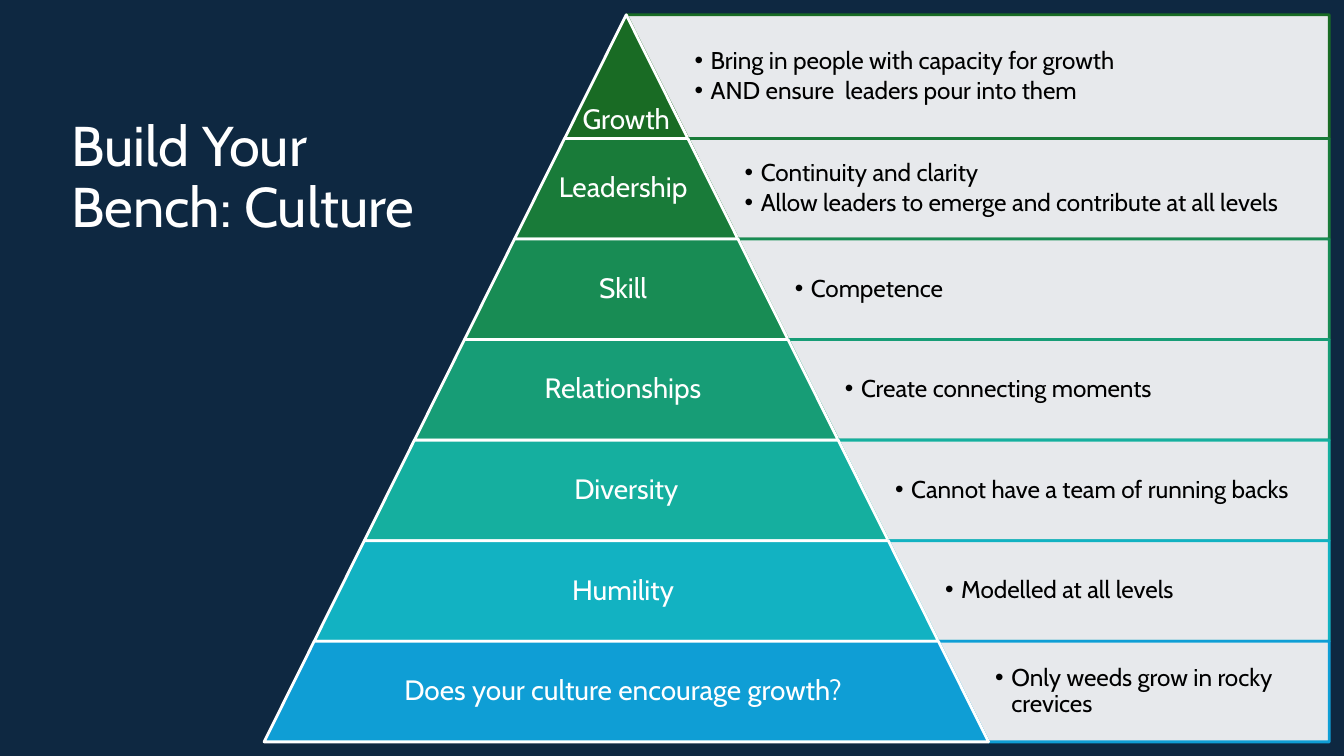
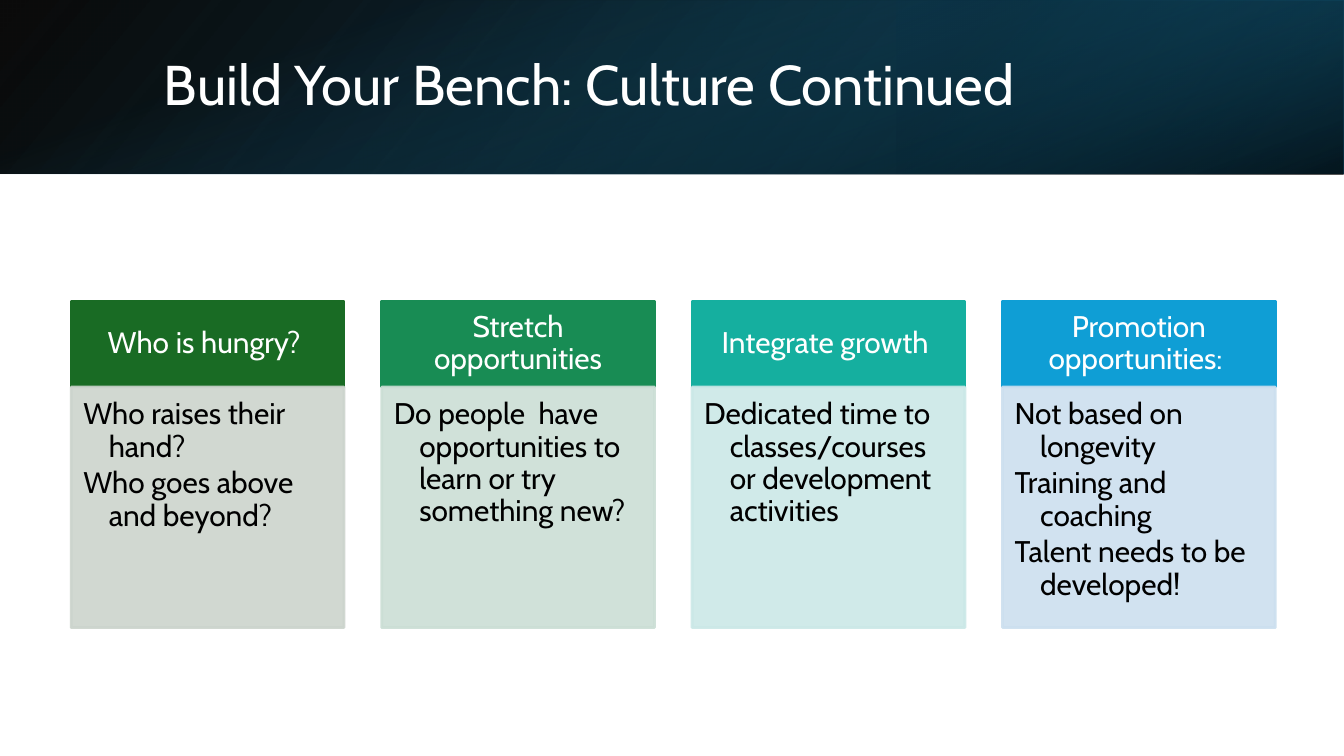
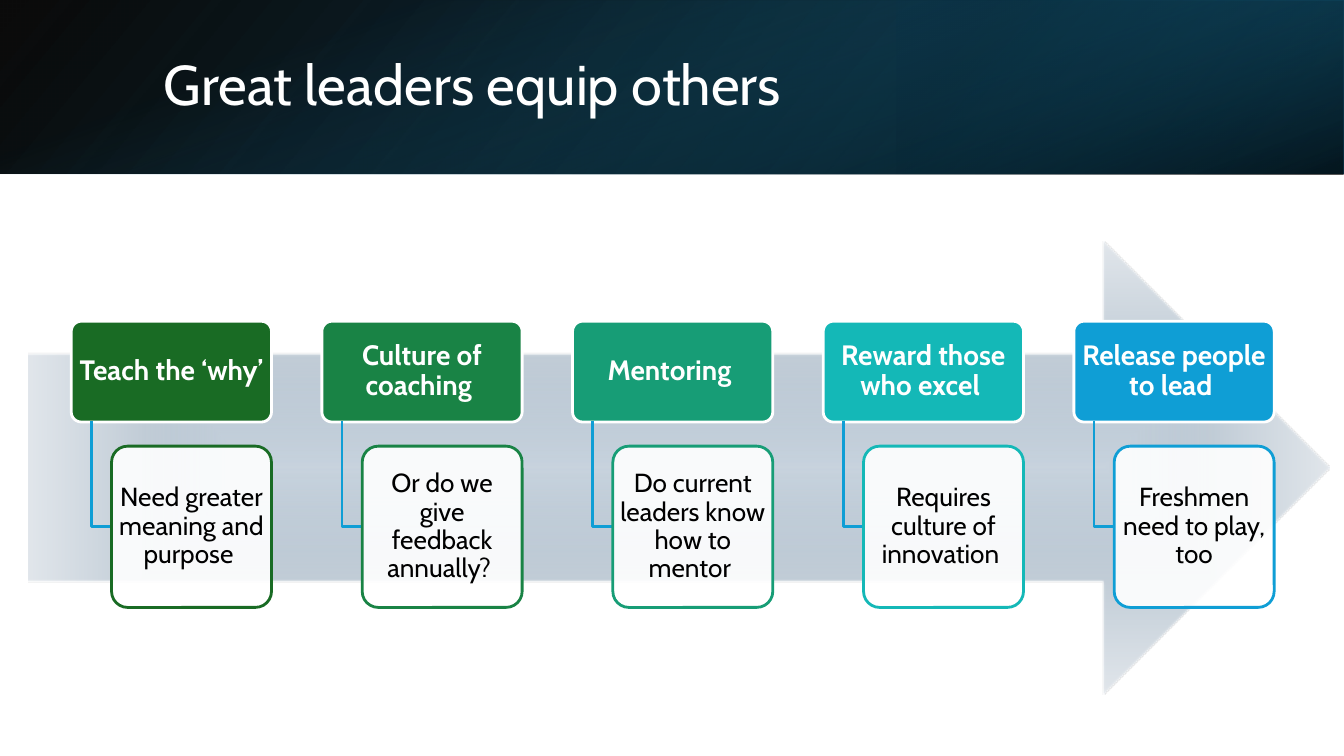
from dataclasses import dataclass

from lxml import etree
from pptx import Presentation
from pptx import util as u
from pptx.dml.color import RGBColor
from pptx.enum import shapes, text
from pptx.oxml.ns import qn

SHAPE = shapes.MSO_SHAPE
ALIGN = text.PP_ALIGN
ANCHOR = text.MSO_ANCHOR


@dataclass(frozen=True)
class Theme:
    font: str = "Cabin"
    bullet_font: str = "Arial"
    navy: str = "0E2841"
    white: str = "FFFFFF"
    black: str = "000000"
    blue: str = "0F9ED5"
    pyramid: tuple = ("196B24", "197B39", "188C54", "179D76", "15AF9F", "12B2C2", "0F9ED5")
    cards: tuple = ("196B24", "188C54", "15AF9F", "0F9ED5")
    card_tints: tuple = ("CCD4CD", "CBDED5", "CBE8E7", "CCDFEF")
    steps: tuple = ("196B24", "198345", "179D76", "14B8B7", "0F9ED5")
    title_size: int = 30
    card_size: int = 16
    label_size: int = 15
    step_size: int = 14
    bullet_size: int = 13
    line_width: float = 1.5
    panel_alpha: int = 90


THEME = Theme()

PYRAMID_ROWS = [
    ("Growth", ["Bring in people with capacity for growth",
                "AND ensure  leaders pour into them"]),
    ("Leadership ", ["Continuity and clarity",
                     "Allow leaders to emerge and contribute at all levels"]),
    ("Skill ", ["Competence"]),
    ("Relationships ", ["Create connecting moments"]),
    ("Diversity", ["Cannot have a team of running backs"]),
    ("Humility ", ["Modelled at all levels"]),
    ("Does your culture encourage growth? ", ["Only weeds grow in rocky crevices"]),
]
CARDS = [
    ("Who is hungry? ", ["Who raises their hand?", "Who goes above and beyond?"]),
    ("Stretch opportunities",
     ["Do people  have opportunities to learn or try something new?"]),
    ("Integrate growth ", ["Dedicated time to classes/courses or development activities"]),
    ("Promotion opportunities: ",
     ["Not based on longevity", "Training and coaching", "Talent needs to be developed!"]),
]
STEPS = [
    ("Teach the ‘why’ ", "Need greater meaning and purpose "),
    ("Culture of coaching ", "Or do we give feedback annually? "),
    ("Mentoring ", "Do current leaders know how to mentor "),
    ("Reward those who excel ", "Requires culture of innovation "),
    ("Release people to lead ", "Freshmen need to play, too"),
]


# Formatting helpers
def set_formats(target, formats):
    for name, value in formats.items():
        setattr(target, name, value)


def inches(*lengths):
    return [u.Inches(length) for length in lengths]


def add_alpha(parent, percent):
    """Make the solid colour directly under parent partly transparent."""
    color = parent.find(qn("a:solidFill")).find(qn("a:srgbClr"))
    etree.SubElement(color, qn("a:alpha"), val=str(percent * 1000))


def fill_gradient(shape, stops, angle=None):
    """Fill with (position, colour, alpha) stops; without an angle, from the centre."""
    gradient = etree.Element(qn("a:gradFill"), rotWithShape="1")
    stop_list = etree.SubElement(gradient, qn("a:gsLst"))
    for position, color, alpha in stops:
        stop = etree.SubElement(stop_list, qn("a:gs"), pos=str(position * 1000))
        color_element = etree.SubElement(stop, qn("a:srgbClr"), val=color)
        etree.SubElement(color_element, qn("a:alpha"), val=str(alpha * 1000))
    if angle is None:
        center = etree.SubElement(gradient, qn("a:path"), {"path": "shape"})
        etree.SubElement(center, qn("a:fillToRect"), dict.fromkeys("ltrb", "50000"))
    else:
        etree.SubElement(gradient, qn("a:lin"), ang=str(angle * 60000), scaled="0")
    properties = shape._element.spPr
    properties.find(qn("a:prstGeom")).addnext(gradient)


def write_text(shape, lines, size, color, insets, anchor=ANCHOR.MIDDLE,
               align=ALIGN.CENTER, bold=False, hanging=0, bullet=None):
    frame = shape.text_frame
    names = ("margin_left", "margin_top", "margin_right", "margin_bottom")
    set_formats(frame, dict(zip(names, inches(*insets))))
    set_formats(frame, {"word_wrap": True, "auto_size": text.MSO_AUTO_SIZE.NONE,
                        "vertical_anchor": anchor})
    for index, line in enumerate(lines):
        paragraph = frame.add_paragraph() if index else frame.paragraphs[0]
        set_formats(paragraph, {"alignment": align, "line_spacing": 0.9})
        run = paragraph.add_run()
        run.text = line
        set_formats(run.font, {"name": THEME.font, "size": u.Pt(size), "bold": bold})
        run.font.color.rgb = RGBColor.from_string(color)
        if hanging:
            set_formats(paragraph, {"level": 1, "space_after": u.Pt(size * 0.15)})
            properties = paragraph._p.get_or_add_pPr()
            properties.set("marL", str(u.Inches(hanging)))
            properties.set("indent", str(-u.Inches(hanging)))
            if bullet:
                etree.SubElement(properties, qn("a:buFont"), typeface=THEME.bullet_font)
                etree.SubElement(properties, qn("a:buChar"), char=bullet)


# Elements
def add_block(slide, kind, box, fill=None, line=None, adjustments=(),
              rotation=0, fill_alpha=100, line_alpha=100):
    shape = slide.shapes.add_shape(kind, *inches(*box))
    shape.shadow.inherit = False
    shape.rotation = rotation
    for index, value in enumerate(adjustments):
        shape.adjustments[index] = value
    if fill:
        shape.fill.solid()
        shape.fill.fore_color.rgb = RGBColor.from_string(fill)
        if fill_alpha < 100:
            add_alpha(shape._element.spPr, fill_alpha)
    if line:
        shape.line.width = u.Pt(THEME.line_width)
        shape.line.color.rgb = RGBColor.from_string(line)
        if line_alpha < 100:
            add_alpha(shape.line._get_or_add_ln(), line_alpha)
    else:
        shape.line.fill.background()
    return shape


def add_text(slide, box, lines, *args, **formats):
    write_text(slide.shapes.add_textbox(*inches(*box)), lines, *args, **formats)


def add_elbow(slide, left, top, width, height):
    """Open line that goes down and then right."""
    builder = slide.shapes.build_freeform(*inches(left, top))
    corners = [(left, top + height), (left + width, top + height)]
    builder.add_line_segments([inches(*corner) for corner in corners], close=False)
    elbow = builder.convert_to_shape()
    elbow.shadow.inherit = False
    elbow.fill.background()
    elbow.line.width = u.Pt(THEME.line_width)
    elbow.line.color.rgb = RGBColor.from_string(THEME.blue)


def add_title(slide, title, box, insets, anchor):
    placeholder = slide.shapes.title
    set_formats(placeholder, dict(zip(("left", "top", "width", "height"), inches(*box))))
    write_text(placeholder, [title], THEME.title_size, THEME.white, insets,
               anchor=anchor, align=ALIGN.LEFT)


def add_slide(presentation, background):
    slide = presentation.slides.add_slide(presentation.slide_layouts[5])
    slide.background.fill.solid()
    slide.background.fill.fore_color.rgb = RGBColor.from_string(background)
    return slide


def add_banded_slide(presentation, title):
    """White slide with a dark gradient band behind its title."""
    slide = add_slide(presentation, THEME.white)
    layers = [
        ((0, 0, 10, 1.29), 0, True, [(0, "000000", 96), (100, "104862", 100)], 140),
        ((6.67, 0, 3.33, 1.29), 180, True, [(19, "0B3041", 68), (100, "156082", 79)], 320),
        ((4.35, -4.35, 1.29, 10), 90, False, [(23, "156082", 0), (99, "000000", 74)], 340),
    ]
    for box, rotation, flipped, stops, angle in layers:
        layer = add_block(slide, SHAPE.RECTANGLE, box, rotation=rotation)
        fill_gradient(layer, stops, angle)
        if flipped:
            layer._element.spPr.find(qn("a:xfrm")).set("flipH", "1")
    # The title goes in front of the band
    tree = slide.shapes._spTree
    tree.append(slide.shapes.title._element)
    add_title(slide, title, (1.12, 0.29, 8.24, 0.72), (0.1, 0.05, 0.1, 0.05), ANCHOR.MIDDLE)
    return slide


def spread(first, last, count):
    step = (last - first) / (count - 1)
    return [first + index * step for index in range(count)]


# Slides
def build_pyramid_slide(presentation):
    slide = add_slide(presentation, THEME.navy)
    add_title(slide, "Build Your Bench: Culture", (0.43, 0.78, 3.17, 1.19),
              (0.1,) * 4, ANCHOR.TOP)
    apex, peak, base, base_width, right = 4.66, 0.11, 5.52, 5.39, 9.89
    slope = base_width / 2 / (base - peak)
    edges = [peak] + spread(1.03, base, len(PYRAMID_ROWS))
    rows = zip(PYRAMID_ROWS, THEME.pyramid, edges, edges[1:])
    for (label, bullets), color, top, bottom in rows:
        height = bottom - top
        half_width = slope * (bottom - peak)
        width = 2 * half_width
        # Notes panel beside the row
        panel_left = apex + slope * (top - peak)
        text_left = apex + half_width
        add_block(slide, SHAPE.NON_ISOSCELES_TRAPEZOID,
                  (panel_left, top, right - panel_left, height), THEME.white, color,
                  (0, slope), rotation=180, fill_alpha=THEME.panel_alpha)
        add_text(slide, (text_left, top, right - text_left, height), bullets,
                 THEME.bullet_size, THEME.black, (0.05,) * 4, align=ALIGN.LEFT,
                 hanging=0.12, bullet="•")
        # Pyramid row and its label
        add_block(slide, SHAPE.TRAPEZOID, (apex - half_width, top, width, height),
                  color, THEME.white, (slope * height / min(width, height),))
        is_tip = top == peak
        label_width = width if is_tip else 0.65 * width
        add_text(slide, (apex - label_width / 2, top, label_width, height), [label],
                 THEME.label_size, THEME.white, (0.02,) * 4,
                 anchor=ANCHOR.BOTTOM if is_tip else ANCHOR.MIDDLE)


def build_cards_slide(presentation):
    slide = add_banded_slide(presentation, "Build Your Bench: Culture Continued")
    lefts = spread(0.53, 7.46, len(CARDS))
    for (heading, lines), color, tint, left in zip(CARDS, THEME.cards, THEME.card_tints, lefts):
        header = add_block(slide, SHAPE.RECTANGLE, (left, 2.24, 2.03, 0.64), color, color)
        write_text(header, [heading], THEME.card_size, THEME.white, (0.12, 0.07, 0.12, 0.07))
        body = add_block(slide, SHAPE.RECTANGLE, (left, 2.88, 2.03, 1.79), tint, tint,
                         fill_alpha=THEME.panel_alpha, line_alpha=THEME.panel_alpha)
        write_text(body, lines, THEME.card_size, THEME.black, (0.09, 0.09, 0.12, 0.14),
                   anchor=ANCHOR.TOP, align=ALIGN.LEFT, hanging=0.19)


def build_steps_slide(presentation):
    slide = add_banded_slide(presentation, "Great leaders equip others")
    # Soft-edged arrow behind the steps
    arrow = add_block(slide, SHAPE.RIGHT_ARROW, (0.21, 1.8, 9.68, 3.37))
    fill_gradient(arrow, [(0, "98ADC1", 53), (50, "C2CDD7", 100), (100, "E1E6EB", 100)])
    effects = arrow._element.spPr.find(qn("a:effectLst"))
    etree.SubElement(effects, qn("a:softEdge"), rad=str(u.Inches(0.01)))

    header_insets = (0.03, 0.02, 0.03, 0.02)
    detail_insets = (0.02,) * 4
    for (heading, detail), color, left in zip(STEPS, THEME.steps, spread(0.53, 7.99, len(STEPS))):
        header = add_block(slide, SHAPE.ROUNDED_RECTANGLE, (left, 2.39, 1.49, 0.75),
                           color, THEME.white, (0.1,))
        write_text(header, [heading], THEME.label_size, THEME.white, header_insets, bold=True)
        add_elbow(slide, left + 0.15, 3.13, 0.15, 0.79)
        box = add_block(slide, SHAPE.ROUNDED_RECTANGLE, (left + 0.3, 3.32, 1.19, 1.2),
                        THEME.white, color, (0.1,), fill_alpha=THEME.panel_alpha)
        write_text(box, [detail], THEME.step_size, THEME.black, detail_insets)


def main():
    presentation = Presentation()
    width = u.Inches(10)
    set_formats(presentation, {"slide_width": width, "slide_height": width * 9 // 16})
    build_pyramid_slide(presentation)
    build_cards_slide(presentation)
    build_steps_slide(presentation)
    presentation.save("out.pptx")


if __name__ == "__main__":
    main()
